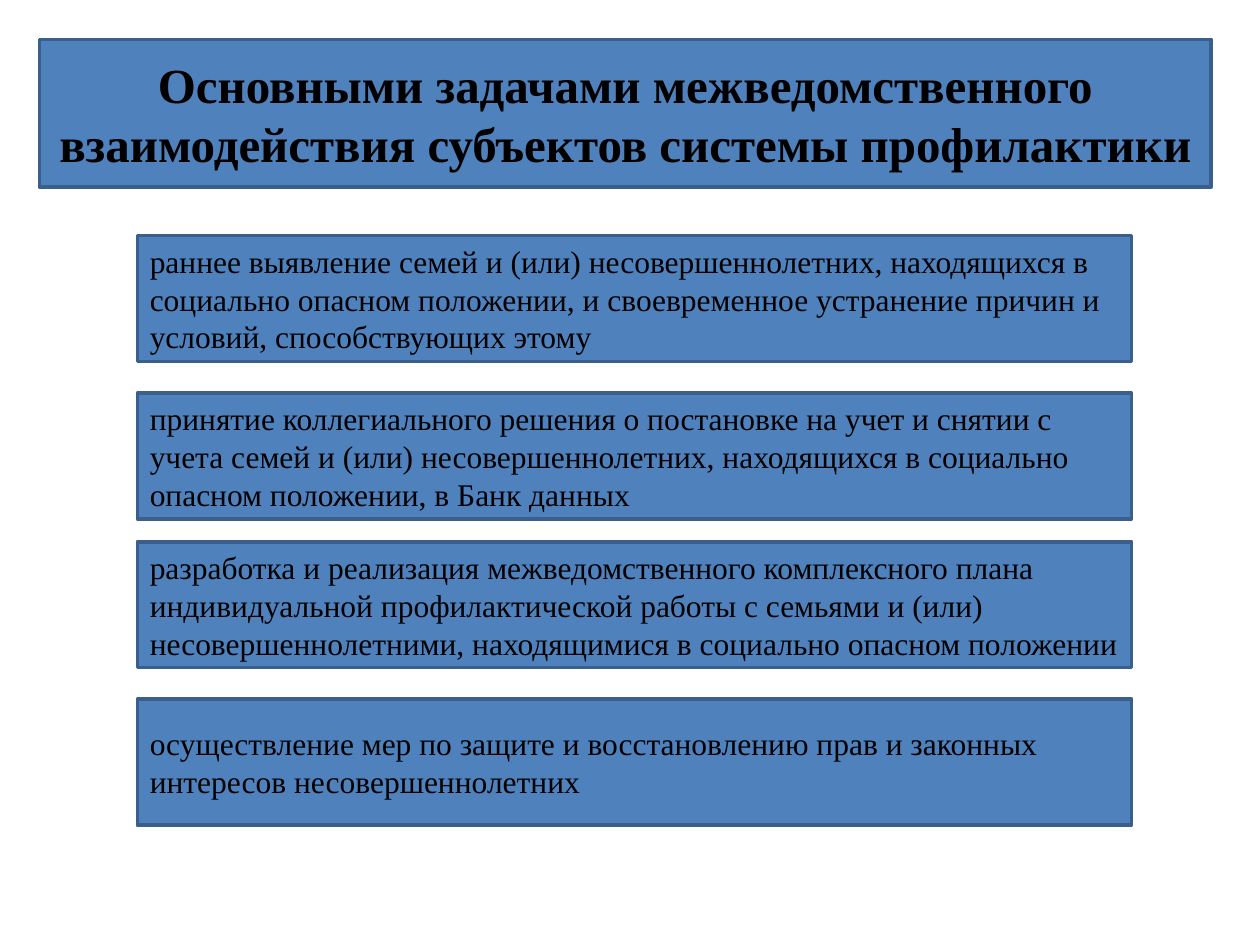
from dataclasses import dataclass
from pptx import Presentation
from pptx.dml.color import RGBColor
from pptx.enum.shapes import MSO_SHAPE
from pptx.enum.text import MSO_ANCHOR, MSO_AUTO_SIZE, PP_ALIGN
from pptx.util import Pt


@dataclass(frozen=True)
class Theme:
    fill: RGBColor = RGBColor(0x4F, 0x81, 0xBD)
    line: RGBColor = RGBColor(0x3A, 0x5F, 0x8C)
    text: RGBColor = RGBColor(0, 0, 0)
    face: str = "Times New Roman"
    head: int = 28
    body: int = 18
    edge: int = 2


THEME = Theme()
TITLE = "Основными задачами межведомственного взаимодействия субъектов системы профилактики"
# Top of each task box in points, with its text
TASKS = [
    (134.64, "раннее выявление семей и (или) несовершеннолетних, находящихся в "
             "социально опасном положении, и своевременное устранение причин и "
             "условий, способствующих этому"),
    (224.64, "принятие коллегиального решения о постановке на учет и снятии с "
             "учета семей и (или) несовершеннолетних, находящихся в социально "
             "опасном положении, в Банк данных"),
    (309.6, "разработка и реализация межведомственного комплексного плана "
            "индивидуальной профилактической работы с семьями и (или) "
            "несовершеннолетними, находящимися в социально опасном положении"),
    (399.6, "осуществление мер по защите и восстановлению прав и законных "
            "интересов несовершеннолетних"),
]


def style(shape, text, size, align, bold=False):
    """Fill and outline a shape and set its text."""
    shape.fill.solid()
    shape.fill.fore_color.rgb = THEME.fill
    shape.line.color.rgb = THEME.line
    shape.line.width = Pt(THEME.edge)
    frame = shape.text_frame
    frame.word_wrap = True
    frame.auto_size = MSO_AUTO_SIZE.NONE
    frame.vertical_anchor = MSO_ANCHOR.MIDDLE
    frame.text = text
    para = frame.paragraphs[0]
    para.alignment = align
    font = para.font
    font.name, font.size, font.bold = THEME.face, Pt(size), bold
    font.color.rgb = THEME.text


def add_title(slide, left, top, width, height):
    title = slide.shapes.title
    title.left, title.top = Pt(left), Pt(top)
    title.width, title.height = Pt(width), Pt(height)
    style(title, TITLE, THEME.head, PP_ALIGN.CENTER, bold=True)


def add_task(slide, text, left, top, width, height):
    box = slide.shapes.add_shape(
        MSO_SHAPE.RECTANGLE, Pt(left), Pt(top), Pt(width), Pt(height))
    box.shadow.inherit = False
    style(box, text, THEME.body, PP_ALIGN.LEFT)


def main():
    deck = Presentation()
    deck.slide_width, deck.slide_height = Pt(720), Pt(540)
    slide = deck.slides.add_slide(deck.slide_layouts[5])
    add_title(slide, 22.5, 22.5, 669.6, 84.4)
    for top, text in TASKS:
        add_task(slide, text, 78.5, top, 568.1, 72)
    deck.save("out.pptx")


if __name__ == "__main__":
    main()
